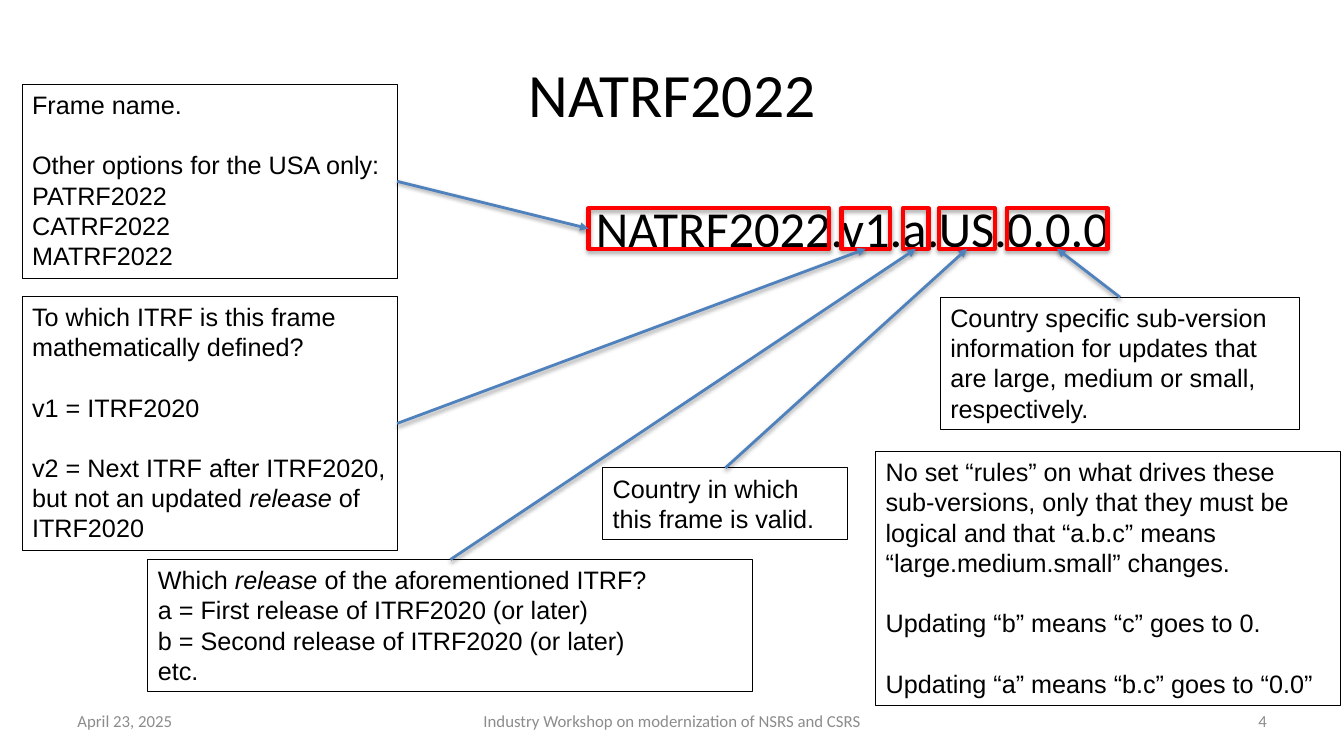
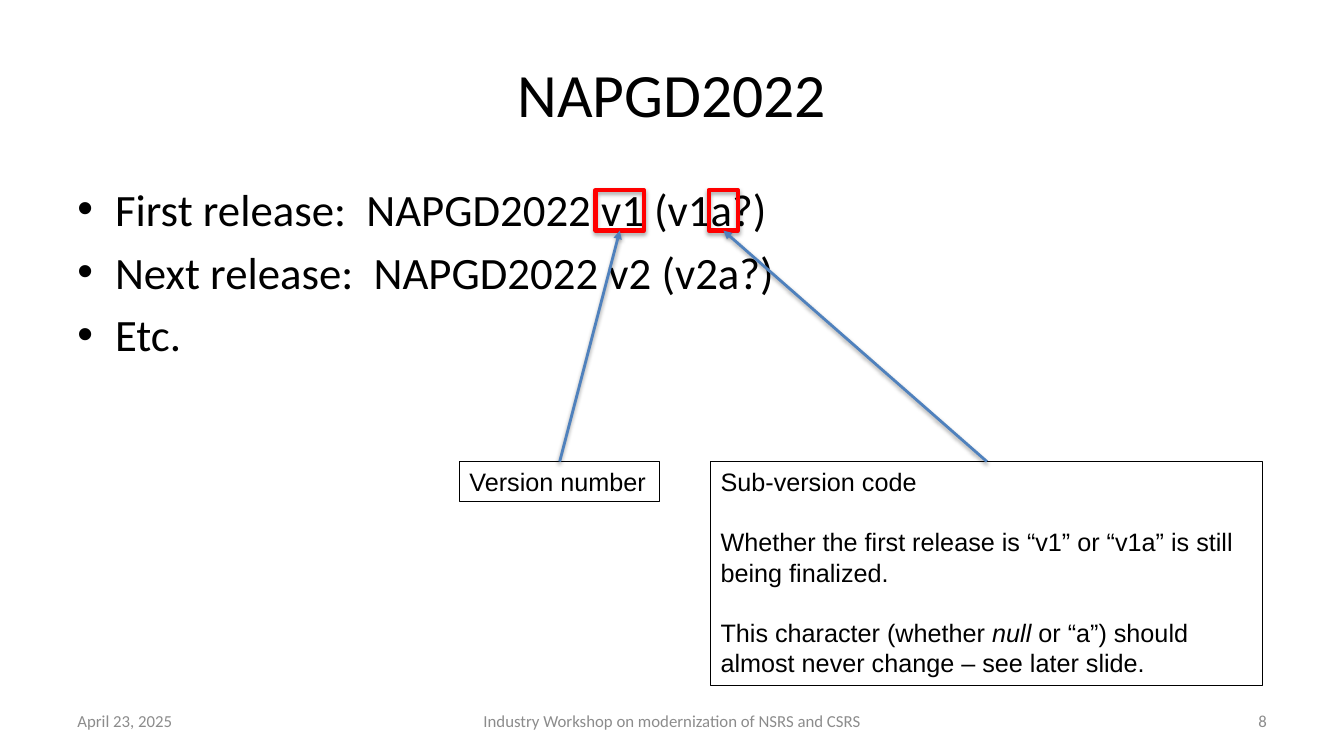
from dataclasses import dataclass

from pptx import Presentation
from pptx.dml.color import RGBColor
from pptx.enum.shapes import MSO_CONNECTOR, MSO_SHAPE
from pptx.enum.text import MSO_ANCHOR, PP_ALIGN
from pptx.oxml import parse_xml
from pptx.oxml.ns import nsdecls, qn
from pptx.util import Cm, Pt


@dataclass(frozen=True)
class Theme:
    ink: RGBColor = RGBColor(0x00, 0x00, 0x00)
    muted: RGBColor = RGBColor(0x8C, 0x8C, 0x8C)
    frame: RGBColor = RGBColor(0xFF, 0x00, 0x00)
    arrow: RGBColor = RGBColor(0x4F, 0x81, 0xBD)
    heading_font: str = "Calibri"
    note_font: str = "Arial"
    title_size: int = 44
    code_size: int = 36
    bullet_size: int = 32
    note_size: int = 18
    footer_size: int = 12
    note_gap: float = 21.5  # one line of note text


THEME = Theme()
TOP, LEFT, BOTTOM, RIGHT = range(4)  # connection sites of a rectangle

# All boxes are (left, top, width, height) in centimetres.
TITLE_BOX = (1.7, 0.76, 30.48, 3.18)
FOOTER_TOP, FOOTER_HEIGHT = 17.65, 1.02
FRAME_HEIGHT = 1.02

DATE = "April 23, 2025"
EVENT = "Industry Workshop on modernization of NSRS and CSRS"

# A note is a list of groups of lines; *asterisks* mark italics.
# A callout's frame is (left, width); its sites are where the arrow starts and ends.
SLIDES = [
    {
        "title": "NATRF2022",
        "number": "4",
        "code": ("NATRF2022.v1.a.US.0.0.0", (6.25, 4.85, 30.48, 1.73)),
        "frame_top": 5.25,
        "callouts": [
            {"frame": (14.83, 6.07), "box": (0.56, 2.13, 9.45, 4.88), "sites": (RIGHT, LEFT),
             "note": [["Frame name."],
                      ["Other options for the USA only:", "PATRF2022", "CATRF2022", "MATRF2022"]]},
            {"frame": (21.21, 1.22), "box": (0.56, 7.47, 9.45, 6.4), "sites": (RIGHT, BOTTOM),
             "note": [["To which ITRF is this frame mathematically defined?"],
                      ["v1 = ITRF2020"],
                      ["v2 = Next ITRF after ITRF2020, but not an updated *release* of ITRF2020"]]},
            {"frame": (22.76, 0.64), "box": (3.73, 14.1, 15.24, 3.33), "sites": (TOP, BOTTOM),
             "note": [["Which *release* of the aforementioned ITRF?",
                       "a = First release of ITRF2020 (or later)",
                       "b = Second release of ITRF2020 (or later)",
                       "etc."]]},
            {"frame": (23.67, 1.4), "box": (15.19, 11.79, 6.18, 1.8), "sites": (TOP, BOTTOM),
             "note": [["Country in which this frame is valid."]]},
            {"frame": (25.37, 2.54), "box": (23.7, 7.49, 9.05, 3.33), "sites": (TOP, BOTTOM),
             "note": [["Country specific sub-version information for updates that are large, "
                       "medium or small, respectively."]]},
            {"box": (22.07, 11.38, 11.71, 6.4),
             "note": [["No set “rules” on what drives these sub-versions, only that they must be "
                       "logical and that “a.b.c” means “large.medium.small” changes."],
                      ["Updating “b” means “c” goes to 0."],
                      ["Updating “a” means “b.c” goes to “0.0”"]]},
        ],
    },
    {
        "title": "NAPGD2022",
        "number": "8",
        "bullets": (["First release:  NAPGD2022 v1 (v1a?)",
                     "Next release:  NAPGD2022 v2 (v2a?)",
                     "Etc."], (1.7, 4.45, 30.48, 12.57)),
        "frame_top": 4.79,
        "callouts": [
            {"frame": (15.01, 1.22), "box": (11.58, 11.63, 5.05, 1.02), "sites": (TOP, BOTTOM),
             "note": [["Version number"]]},
            {"frame": (17.86, 0.74), "box": (17.91, 11.63, 13.92, 5.64), "sites": (TOP, BOTTOM),
             "note": [["Sub-version code"],
                      ["Whether the first release is “v1” or “v1a” is still being finalized."],
                      ["This character (whether *null* or “a”) should almost never change "
                       "– see later slide."]]},
        ],
    },
]


def in_cm(box):
    return [Cm(length) for length in box]


def style(font, name, size, color):
    font.name, font.size = name, Pt(size)
    font.color.rgb = color


def add_text(page, box, lines, size, color=THEME.ink, align=PP_ALIGN.LEFT,
             anchor=MSO_ANCHOR.TOP, bulleted=False):
    frame = page.shapes.add_textbox(*in_cm(box)).text_frame
    frame.word_wrap = True
    frame.vertical_anchor = anchor
    frame.text = "\n".join(lines)
    for index, para in enumerate(frame.paragraphs):
        para.alignment = align
        if index:
            para.space_before = Pt(size * 0.2)
        if bulleted:
            add_bullet(para)
        for span in para.runs:
            style(span.font, THEME.heading_font, size, color)


def add_bullet(para):
    properties = para._p.get_or_add_pPr()
    properties.set("marL", str(Cm(0.95)))
    properties.set("indent", str(-Cm(0.95)))
    properties.append(parse_xml(f'<a:buFont {nsdecls("a")} typeface="Arial"/>'))
    properties.append(parse_xml(f'<a:buChar {nsdecls("a")} char="•"/>'))


def add_shadow(shape, distance, opacity):
    """Give a shape whose line is already set a soft shadow straight below."""
    shape._element.spPr.append(parse_xml(
        f'<a:effectLst {nsdecls("a")}><a:outerShdw blurRad="{Pt(3.1)}" dist="{Pt(distance)}"'
        ' dir="5400000" rotWithShape="0"><a:srgbClr val="000000">'
        f'<a:alpha val="{opacity * 1000}"/></a:srgbClr></a:outerShdw></a:effectLst>'))


def set_line(shape, color, width):
    shape.line.color.rgb = color
    shape.line.width = Pt(width)


def add_frame(page, box):
    frame = page.shapes.add_shape(MSO_SHAPE.RECTANGLE, *in_cm(box))
    frame.fill.background()
    set_line(frame, THEME.frame, 3)
    add_shadow(frame, 1.8, 35)
    return frame


def add_note(page, box, groups):
    note = page.shapes.add_textbox(*in_cm(box))
    set_line(note, THEME.ink, 0.75)
    text = note.text_frame
    text.word_wrap = True
    starts_group = [(line, place == 0) for group in groups for place, line in enumerate(group)]
    for index, (line, is_start) in enumerate(starts_group):
        para = text.add_paragraph() if index else text.paragraphs[0]
        if index and is_start:
            para.space_before = Pt(THEME.note_gap)
        for part, words in enumerate(line.split("*")):
            span = para.add_run()
            span.text = words
            style(span.font, THEME.note_font, THEME.note_size, THEME.ink)
            if part % 2:
                span.font.italic = True
    return note


def add_arrow(page, note, frame, sites):
    arrow = page.shapes.add_connector(MSO_CONNECTOR.STRAIGHT, 0, 0, 0, 0)
    arrow.begin_connect(note, sites[0])
    arrow.end_connect(frame, sites[1])
    set_line(arrow, THEME.arrow, 2)
    arrow._element.spPr.find(qn("a:ln")).append(
        parse_xml(f'<a:tailEnd {nsdecls("a")} type="triangle"/>'))
    add_shadow(arrow, 1.6, 38)


def add_footer(page, number):
    for left, width, text, align in (
        (1.7, 7.9, DATE, PP_ALIGN.LEFT),
        (11.58, 10.72, EVENT, PP_ALIGN.CENTER),
        (24.28, 7.9, number, PP_ALIGN.RIGHT),
    ):
        add_text(page, (left, FOOTER_TOP, width, FOOTER_HEIGHT), [text], THEME.footer_size,
                 THEME.muted, align, MSO_ANCHOR.MIDDLE)


def add_page(deck, content):
    page = deck.slides.add_slide(deck.slide_layouts[6])
    add_text(page, TITLE_BOX, [content["title"]], THEME.title_size,
             align=PP_ALIGN.CENTER, anchor=MSO_ANCHOR.MIDDLE)
    if "code" in content:
        code, box = content["code"]
        add_text(page, box, [code], THEME.code_size, align=PP_ALIGN.CENTER)
    if "bullets" in content:
        bullets, box = content["bullets"]
        add_text(page, box, bullets, THEME.bullet_size, bulleted=True)
    add_footer(page, content["number"])
    for callout in content["callouts"]:
        note = add_note(page, callout["box"], callout["note"])
        if "frame" in callout:
            left, width = callout["frame"]
            frame = add_frame(page, (left, content["frame_top"], width, FRAME_HEIGHT))
            add_arrow(page, note, frame, callout["sites"])


def main():
    deck = Presentation()
    deck.slide_width, deck.slide_height = Cm(33.87), Cm(19.05)
    for content in SLIDES:
        add_page(deck, content)
    deck.save("out.pptx")


if __name__ == "__main__":
    main()
